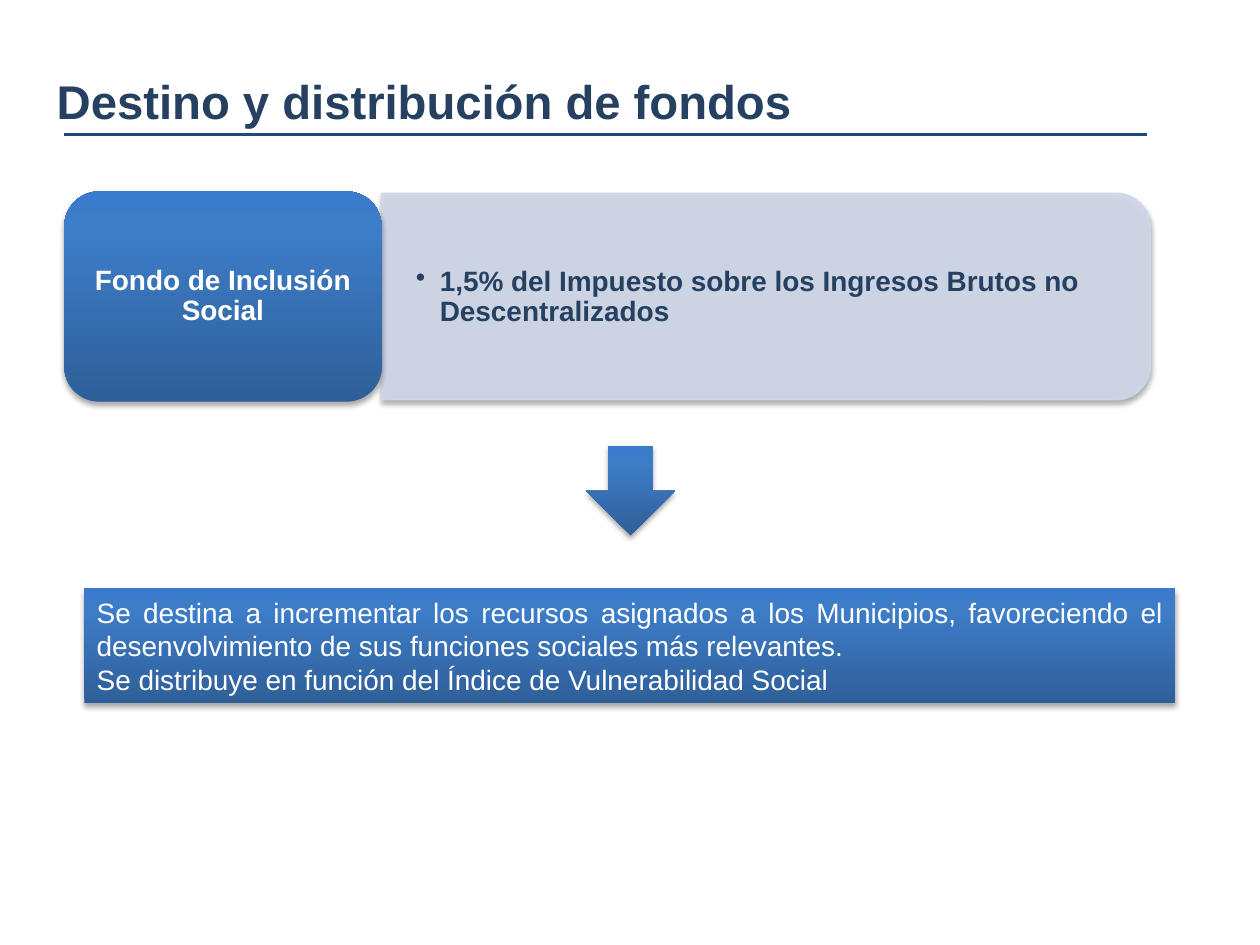
import copy
import pptx
import pptx.util
import pptx.dml.color
import pptx.enum.shapes
import pptx.enum.text
from lxml import etree
from pptx.oxml.ns import qn

Pt = pptx.util.Pt
Shape = pptx.enum.shapes.MSO_SHAPE
Align = pptx.enum.text.PP_ALIGN
Anchor = pptx.enum.text.MSO_ANCHOR
Fit = pptx.enum.text.MSO_AUTO_SIZE

# Content
TITLE = "Destino y distribución de fondos"
FUND = "Fondo de Inclusión Social"
SOURCE = "1,5% del Impuesto sobre los Ingresos Brutos no Descentralizados"
USES = [
    "Se destina a incrementar los recursos asignados a los Municipios, "
    "favoreciendo el desenvolvimiento de sus funciones sociales más relevantes.",
    "Se distribuye en función del Índice de Vulnerabilidad Social",
]

THEME = {
    "font": "Arial", "title": 27, "body": 16,
    "dark": "254061", "white": "FFFFFF", "rule": "1F497D", "pale": "D0D8E8",
    "blue": [(0, "2F5F99"), (0.8, "3D7CC7"), (1, "3A7CCB")],
}

# Places in points: left, top, width, height
HEAD = (25.2, 37.4, 635, 40.3)
RULE = (36.7, 77, 655.2)
CARD = (36.7, 109.4, 181.4, 120.2)
PANEL = (218.2, 110.4, 439.2, 118.1)
NOTE = (218.2, 116.6, 433.4, 106.6)
ARROW = (334.8, 254.9, 51.1, 51.1)
BAND = (48.2, 336.2, 623.5, 65.5)


def rgb(name):
    return pptx.dml.color.RGBColor.from_string(THEME.get(name, name))


def add(parent, tag, **attrs):
    return etree.SubElement(parent, qn(tag), {k: str(v) for k, v in attrs.items()})


def shade(shape):
    shape.shadow.inherit = False
    glow = add(shape._element.spPr.find(qn("a:effectLst")), "a:outerShdw",
               blurRad=Pt(3.1), dist=Pt(1.8), dir=5400000, rotWithShape=0)
    add(add(glow, "a:srgbClr", val="000000"), "a:alpha", val=35000)


def blue(kind, place):
    shape = slide.shapes.add_shape(kind, *map(Pt, place))
    shape.fill.gradient()
    shape.fill.gradient_angle = 90
    stops = shape._element.spPr.find(qn("a:gradFill")).find(qn("a:gsLst"))
    stops.append(copy.deepcopy(stops[-1]))
    for stop, (pos, tone) in zip(shape.fill.gradient_stops, THEME["blue"]):
        stop.position = pos
        stop.color.rgb = rgb(tone)
    shape.line.fill.background()
    shade(shape)
    return shape


def write(shape, text, tone, size="body", bold=True, align=Align.LEFT,
          pad=(7.2, 3.6), anchor=Anchor.MIDDLE, space=None):
    frame = shape.text_frame
    frame.text = text
    frame.word_wrap = True
    frame.auto_size = Fit.NONE
    frame.vertical_anchor = anchor
    frame.margin_left = frame.margin_right = Pt(pad[0])
    frame.margin_top = frame.margin_bottom = Pt(pad[1])
    for para in frame.paragraphs:
        para.alignment = align
        para.line_spacing = space
        for run in para.runs:
            run.font.name = THEME["font"]
            run.font.size = Pt(THEME[size])
            run.font.bold = bold
            run.font.color.rgb = rgb(tone)


deck = pptx.Presentation()
deck.slide_width, deck.slide_height = Pt(720), Pt(540)
slide = deck.slides.add_slide(deck.slide_layouts[5])

# Title and rule
title = slide.shapes.title
title.left, title.top, title.width, title.height = map(Pt, HEAD)
write(title, TITLE, "dark", "title", anchor=Anchor.TOP)
left, top, right = map(Pt, RULE)
rule = slide.shapes.add_connector(
    pptx.enum.shapes.MSO_CONNECTOR.STRAIGHT, left, top, right, top)
rule.line.color.rgb = rgb("rule")
rule.line.width = Pt(1.5)
add(rule._element.spPr, "a:effectLst")

# Use of the fund
band = blue(Shape.RECTANGLE, BAND)
write(band, "\n".join(USES), "white", bold=False, align=Align.JUSTIFY)
blue(Shape.DOWN_ARROW, ARROW)

# Pale panel: a round-topped shape turned a quarter about its centre
x, y, wide, high = PANEL
panel = slide.shapes.add_shape(
    Shape.ROUND_2_SAME_RECTANGLE, Pt(x + (wide - high) / 2),
    Pt(y + (high - wide) / 2), Pt(high), Pt(wide))
panel.rotation = 90
panel.fill.solid()
panel.fill.fore_color.rgb = rgb("pale")
panel.line.color.rgb = rgb("pale")
panel.line.width = Pt(0.75)
for tint in panel._element.spPr.iter(qn("a:srgbClr")):
    add(tint, "a:alpha", val=90000)
shade(panel)

# Source of the fund, as a bullet
note = slide.shapes.add_textbox(*map(Pt, NOTE))
write(note, SOURCE, "dark", pad=(19.4, 10.1), space=0.9)
props = note.text_frame.paragraphs[0]._p.get_or_add_pPr()
props.set("marL", str(Pt(13.7)))
props.set("indent", str(-Pt(13.7)))
add(props, "a:buChar", char="•")

# Fund card
card = blue(Shape.ROUNDED_RECTANGLE, CARD)
write(card, FUND, "white", align=Align.CENTER, pad=(5, 2.2), space=0.9)

deck.save("out.pptx")
